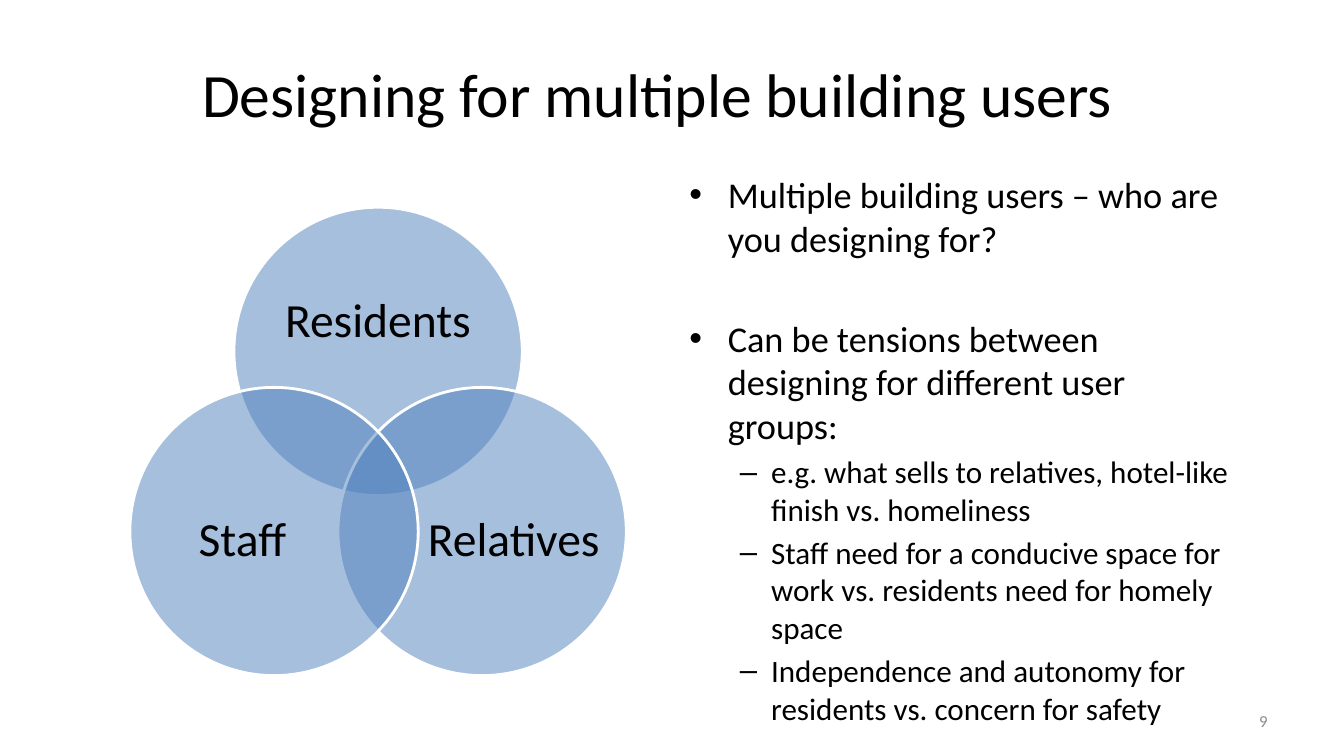
import math
from typing import NamedTuple

from lxml import etree
from pptx import Presentation
from pptx import util as u
from pptx.dml.color import RGBColor
from pptx.enum import shapes, text
from pptx.oxml.ns import qn

WIDTH, HEIGHT = u.Inches(13.33), u.Inches(7.5)
FONT = "Calibri"
BLACK, WHITE, GREY, BLUE = "000000", "FFFFFF", "8C8C8C", "4F81BD"
DIAMETER = 0.2145 * WIDTH
VENN_X, VENN_Y = 0.2813 * WIDTH, 0.6236 * HEIGHT
VENN_RADIUS = DIAMETER * 5 / 12


class Area(NamedTuple):
    left: float
    top: float
    width: float
    height: float


class Circle(NamedTuple):
    label: str
    angle: int
    shift_x: float
    shift_y: float
    label_width: float
    label_height: float


class Level(NamedTuple):
    mark: str
    size: float
    margin: float
    hanging: float


class Point(NamedTuple):
    words: str
    level: Level
    before: float


CIRCLES = [
    Circle("Residents", -90, 0, -0.1, 0.73, 0.45),
    Circle("Relatives", 30, 0.11, 0.033, 0.6, 0.55),
    Circle("Staff", 150, -0.11, 0.033, 0.6, 0.55),
]
MAIN = Level("•", 25.9, 0.38, 0.38)
SUB = Level("–", 22.2, 0.81, 0.31)
POINTS = [
    Point("Multiple building users – who are you designing for?", MAIN, 0),
    Point("Can be tensions between designing for different user groups:", MAIN, 40.5),
    Point("e.g. what sells to relatives, hotel-like finish vs. homeliness", SUB, 4.4),
    Point("Staff need for a conducive space for work vs. residents need for homely space", SUB, 4.4),
    Point("Independence and autonomy for residents vs. concern for safety", SUB, 4.4),
]


def colour(value: str) -> RGBColor:
    return RGBColor.from_string(value)


def share(left: float, top: float, width: float, height: float) -> Area:
    return Area(left * WIDTH, top * HEIGHT, width * WIDTH, height * HEIGHT)


def centred(x: float, y: float, width: float, height: float) -> Area:
    return Area(x - width / 2, y - height / 2, width, height)


def style(para, size: float, value: str = BLACK) -> None:
    for span in para.runs:
        span.font.name = FONT
        span.font.size = u.Pt(size)
        span.font.color.rgb = colour(value)


def add_box(page, area: Area, anchor=text.MSO_ANCHOR.MIDDLE):
    box = page.shapes.add_textbox(*map(round, area))
    frame = box.text_frame
    frame.word_wrap = True
    frame.vertical_anchor = anchor
    return frame


def add_line_of_text(page, area: Area, words: str, size: float, align, value: str = BLACK):
    frame = add_box(page, area)
    frame.text = words
    para = frame.paragraphs[0]
    para.alignment = align
    style(para, size, value)
    return frame


def add_circle(page, circle: Circle) -> None:
    angle = math.radians(circle.angle)
    x = VENN_X + VENN_RADIUS * math.cos(angle)
    y = VENN_Y + VENN_RADIUS * math.sin(angle)
    disc = page.shapes.add_shape(
        shapes.MSO_SHAPE.OVAL, *map(round, centred(x, y, DIAMETER, DIAMETER)))
    disc.shadow.inherit = False
    disc.fill.solid()
    disc.fill.fore_color.rgb = colour(BLUE)
    tint = disc.fill._xPr.find(qn("a:solidFill"))[0]
    etree.SubElement(tint, qn("a:alpha"), val="50000")
    disc.line.color.rgb = colour(WHITE)
    disc.line.width = u.Pt(2)

    area = centred(x + circle.shift_x * DIAMETER, y + circle.shift_y * DIAMETER,
                   circle.label_width * DIAMETER, circle.label_height * DIAMETER)
    frame = add_line_of_text(page, area, circle.label, 34, text.PP_ALIGN.CENTER)
    frame.word_wrap = False
    frame.margin_left = frame.margin_right = frame.margin_top = frame.margin_bottom = 0
    frame.paragraphs[0].line_spacing = 0.9


def add_points(page, area: Area, points: list[Point]) -> None:
    frame = add_box(page, area, text.MSO_ANCHOR.TOP)
    frame.text = "\n".join(point.words for point in points)
    for para, point in zip(frame.paragraphs, points):
        level = point.level
        para.space_before = u.Pt(point.before)
        style(para, level.size)
        properties = para._p.get_or_add_pPr()
        properties.set("marL", str(u.Inches(level.margin)))
        properties.set("indent", str(-u.Inches(level.hanging)))
        etree.SubElement(properties, qn("a:buFont"), typeface="Arial")
        etree.SubElement(properties, qn("a:buChar"), char=level.mark)


def main() -> None:
    deck = Presentation()
    deck.slide_width, deck.slide_height = WIDTH, HEIGHT
    page = deck.slides.add_slide(deck.slide_layouts[6])

    title = add_line_of_text(page, share(0.05, 0.04, 0.9, 0.1667),
                             "Designing for multiple building users", 44, text.PP_ALIGN.CENTER)
    title.margin_right = u.Inches(0.38)
    for circle in CIRCLES:
        add_circle(page, circle)
    add_points(page, share(0.5056, 0.2213, 0.4261, 0.6787), POINTS)
    add_line_of_text(page, share(0.7172, 0.9267, 0.2333, 0.0533), "9", 12,
                     text.PP_ALIGN.RIGHT, GREY)
    deck.save("out.pptx")


if __name__ == "__main__":
    main()
